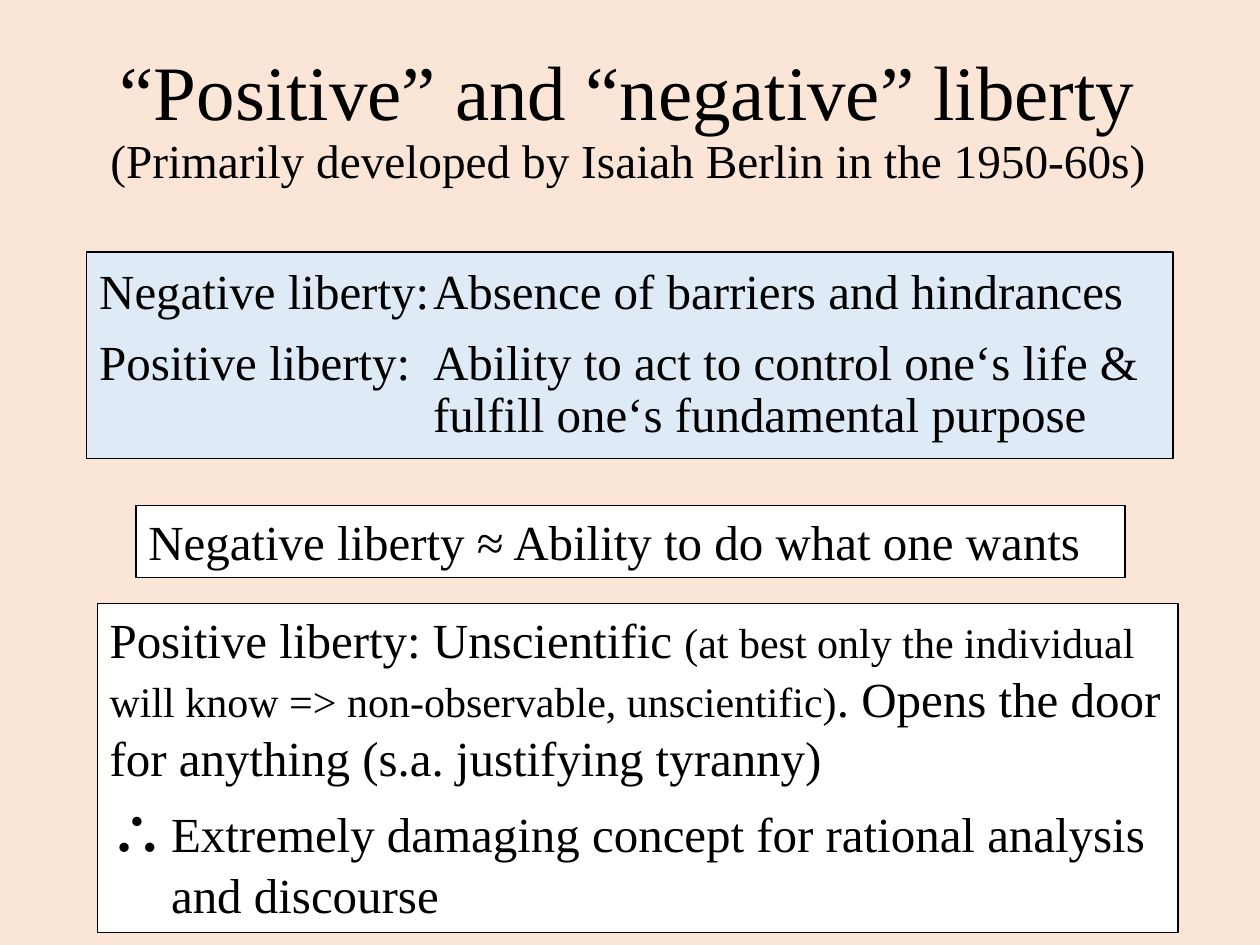
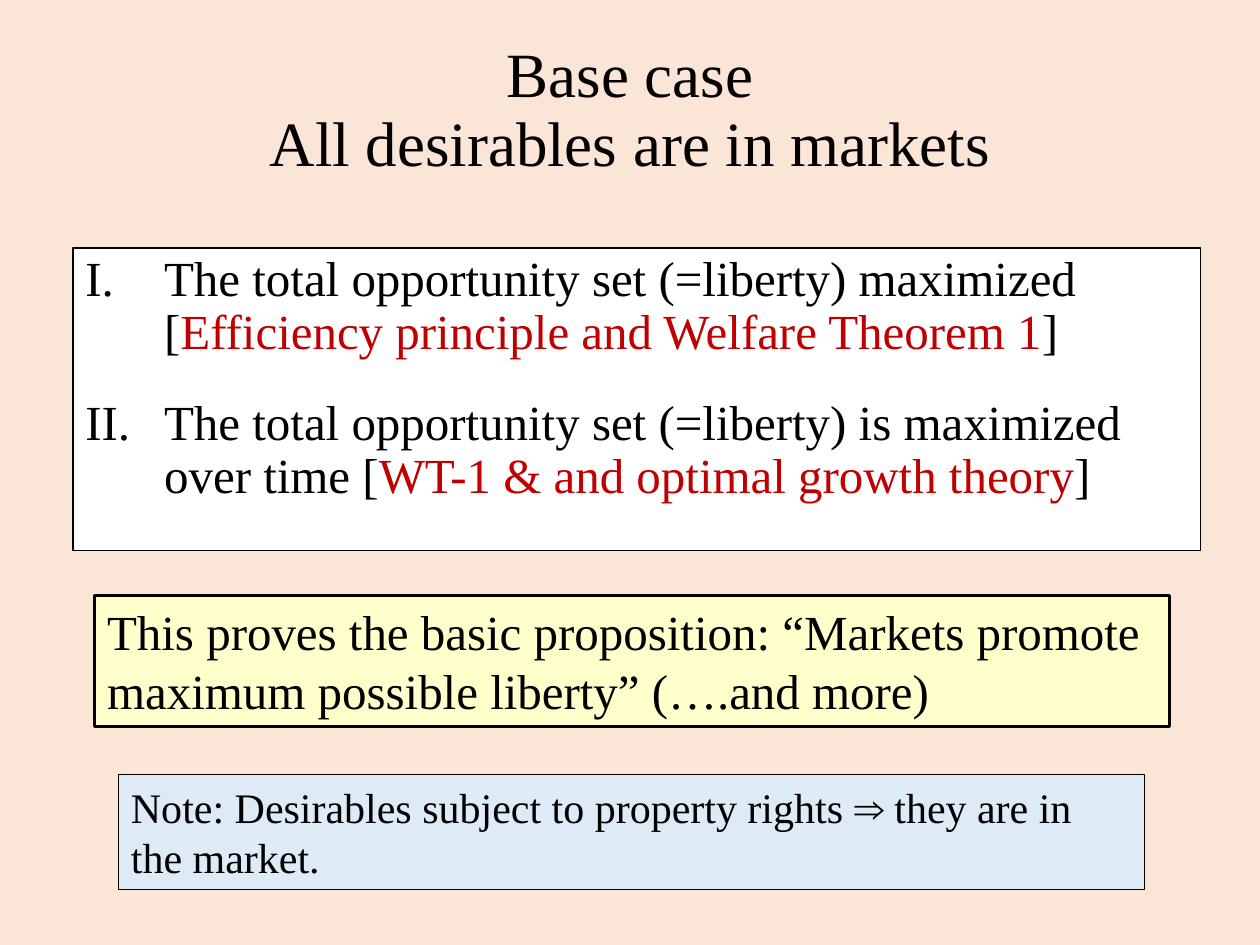
from pptx import Presentation
from pptx import util as u
from pptx.dml.color import RGBColor
from pptx.enum import shapes, text
from pptx.oxml.ns import qn
from lxml import etree

FONT = "Times New Roman"
PEACH = RGBColor(0xFB, 0xE5, 0xD6)
BLUE = RGBColor(0xDE, 0xEB, 0xF7)
YELLOW = RGBColor(0xFF, 0xFF, 0xCC)
WHITE = RGBColor(0xFF, 0xFF, 0xFF)
BLACK = RGBColor(0, 0, 0)
RED = RGBColor(0xC0, 0, 0)


def write(p, words, size=28, color=BLACK, bold=False):
    for i, line in enumerate(words.split("\n")):
        if i:
            p.add_line_break()
        if line:
            r = p.add_run()
            r.text = line
            r.font.name = FONT
            r.font.size = u.Pt(size)
            r.font.color.rgb = color
            r.font.bold = bold


def fill_frame(tf, paragraphs, anchor=text.MSO_ANCHOR.TOP, align=text.PP_ALIGN.LEFT,
               spacing=1.0, before=0, after=0, hang=0, numbering=None):
    tf.word_wrap = True
    tf.auto_size = text.MSO_AUTO_SIZE.NONE
    tf.vertical_anchor = anchor
    for i, runs in enumerate(paragraphs):
        p = tf.add_paragraph() if i else tf.paragraphs[0]
        p.alignment = align
        p.line_spacing = spacing
        p.space_before = u.Pt(before)
        p.space_after = u.Pt(after)
        if hang:
            set_hang(p, hang)
        if numbering:
            etree.SubElement(p._p.get_or_add_pPr(), qn("a:buAutoNum"), type=numbering)
        for words, style in runs:
            write(p, words, **style)


def set_hang(p, width):
    pPr = p._p.get_or_add_pPr()
    pPr.set("marL", str(u.Cm(width)))
    pPr.set("indent", str(-u.Cm(width)))


def add_title(s, box, runs):
    sp = s.shapes.title
    sp.left, sp.top, sp.width, sp.height = map(u.Cm, box)
    fill_frame(sp.text_frame, [runs], anchor=text.MSO_ANCHOR.MIDDLE,
               align=text.PP_ALIGN.CENTER, spacing=0.9)


def add_panel(s, box, paragraphs, fill=WHITE, line_width=0.75, **layout):
    sp = s.shapes.add_shape(shapes.MSO_SHAPE.RECTANGLE, *map(u.Cm, box))
    sp.shadow.inherit = False
    sp.fill.solid()
    sp.fill.fore_color.rgb = fill
    sp.line.color.rgb = BLACK
    sp.line.width = u.Pt(line_width)
    fill_frame(sp.text_frame, paragraphs, **layout)
    return sp


def add_slide(prs):
    s = prs.slides.add_slide(prs.slide_layouts[5])
    s.background.fill.solid()
    s.background.fill.fore_color.rgb = PEACH
    return s


def liberty_slide(prs):
    s = add_slide(prs)
    add_title(s, (0.91, 0.61, 23.5, 3.68), [
        ("“Positive” and “negative” liberty\n", {"size": 44}),
        ("(Primarily developed by Isaiah Berlin in the 1950-60s)", {"size": 27})])
    add_panel(s, (1.75, 5.08, 21.9, 4.17), [
        [("Negative liberty:\tAbsence of barriers and hindrances", {})],
        [("Positive liberty: \tAbility to act to control one‘s life & "
          "fulfill one‘s fundamental purpose", {})]],
        fill=BLUE, anchor=text.MSO_ANCHOR.MIDDLE, spacing=0.9, before=10, hang=6.73)
    add_panel(s, (2.74, 10.19, 19.94, 1.45),
              [[("Negative liberty ≈ Ability to do what one wants", {})]])
    critique = add_panel(s, (1.96, 12.17, 21.79, 6.63), [
        [("Positive liberty: Unscientific ", {}),
         ("(at best only the individual will know => non-observable, unscientific)",
          {"size": 24}),
         (". Opens the door for anything (s.a. justifying tyranny)", {})],
        [("∴", {"size": 32, "bold": True}),
         ("\tExtremely damaging concept for rational analysis and discourse", {})]])
    conclusion = critique.text_frame.paragraphs[-1]
    conclusion.space_before = u.Pt(6)
    set_hang(conclusion, 1.24)


def base_case_slide(prs):
    s = add_slide(prs)
    add_title(s, (1.75, 0.41, 21.9, 3.68),
              [("Base case\nAll desirables are in markets", {"size": 36})])
    add_panel(s, (1.47, 5, 22.73, 6.1), [
        [("The total opportunity set (=liberty) maximized [", {}),
         ("Efficiency principle and Welfare Theorem 1", {"color": RED}), ("]", {})],
        [("The total opportunity set (=liberty) is maximized over time [", {}),
         ("WT-1 & and optimal growth theory", {"color": RED}), ("]", {})]],
        spacing=0.9, before=10, after=12, hang=1.59, numbering="romanUcPeriod")
    add_panel(s, (1.91, 12.01, 21.67, 2.64), [
        [("This proves the basic proposition: “Markets promote maximum possible "
          "liberty” (….and more)", {})]], fill=YELLOW, line_width=2)
    add_panel(s, (2.39, 15.62, 20.68, 2.31), [
        [("Note: Desirables subject to property rights ⇒ they are in the market.",
          {"size": 24})]], fill=BLUE)


def main():
    prs = Presentation()
    prs.slide_width, prs.slide_height = u.Cm(25.4), u.Cm(19.05)
    liberty_slide(prs)
    base_case_slide(prs)
    prs.save("out.pptx")


if __name__ == "__main__":
    main()
